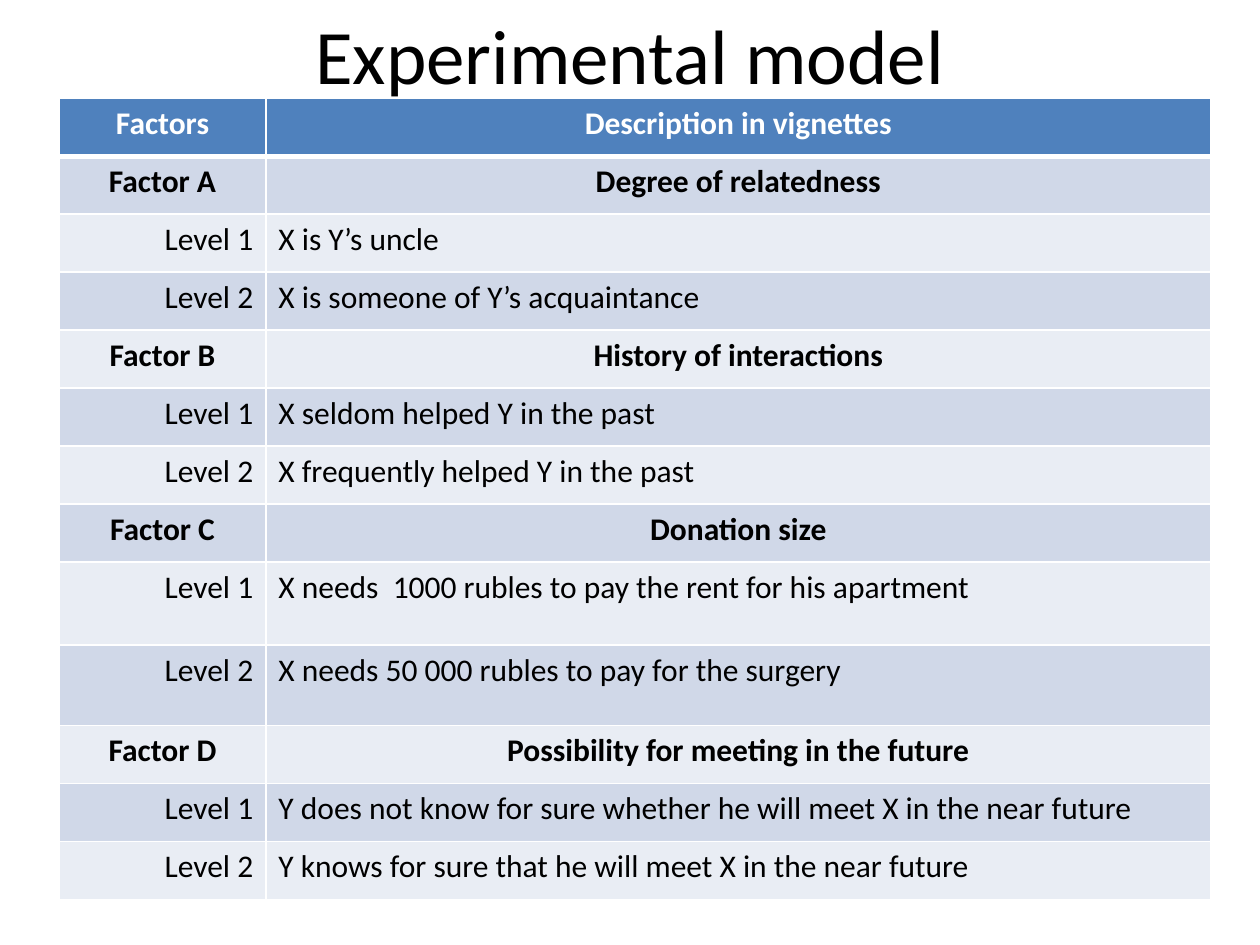
from dataclasses import dataclass

from pptx import Presentation
from pptx.dml.color import RGBColor
from pptx.enum.text import MSO_ANCHOR, MSO_AUTO_SIZE, PP_ALIGN
from pptx.oxml import parse_xml
from pptx.oxml.ns import nsdecls
from pptx.util import Inches, Pt


@dataclass(frozen=True)
class Theme:
    font: str = "Calibri"
    title_size: int = 44
    table_size: int = 18
    ink: str = "000000"
    white: str = "FFFFFF"
    header: str = "4F81BD"
    bands: tuple = ("D0D8E8", "E9EDF4")
    rule: float = 1
    header_rule: float = 3


HEADINGS = ("Factors", "Description in vignettes")
FACTORS = (
    ("Factor A", "Degree of relatedness",
     ("X is Y’s uncle", "X is someone of Y’s acquaintance")),
    ("Factor B", "History of interactions",
     ("X seldom helped Y in the past", "X frequently helped Y in the past")),
    ("Factor C", "Donation size",
     ("X needs  1000 rubles to pay the rent for his apartment",
      "X needs 50 000 rubles to pay for the surgery")),
    ("Factor D", "Possibility for meeting in the future",
     ("Y does not know for sure whether he will meet X in the near future",
      "Y knows for sure that he will meet X in the near future")),
)
COLUMN_WIDTHS = (1.64, 7.5)
ROW_HEIGHT = 0.46
TALL_ROWS = {8: 0.66, 9: 0.64}
CENTERED = (PP_ALIGN.CENTER, PP_ALIGN.CENTER)
LEVEL_ALIGNMENT = (PP_ALIGN.RIGHT, PP_ALIGN.LEFT)


def write(frame, text, *, font, size, color, bold=False, align=PP_ALIGN.LEFT):
    paragraph = frame.paragraphs[0]
    paragraph.alignment = align
    run = paragraph.add_run()
    run.text = text
    run.font.name = font
    run.font.size = Pt(size)
    run.font.bold = bold
    run.font.color.rgb = RGBColor.from_string(color)


def set_borders(cell, color, **widths):
    """Draw cell edges; widths in points are keyed L, R, T and B, in that order."""
    properties = cell._tc.get_or_add_tcPr()
    for position, (side, width) in enumerate(widths.items()):
        properties.insert(position, parse_xml(
            f'<a:ln{side} {nsdecls("a")} w="{Pt(width)}"><a:solidFill>'
            f'<a:srgbClr val="{color}"/></a:solidFill></a:ln{side}>'))


def table_rows():
    """Yield each row's texts, their alignments and whether they are bold."""
    yield HEADINGS, CENTERED, True
    for factor, description, levels in FACTORS:
        yield (factor, description), CENTERED, True
        for number, vignette in enumerate(levels, 1):
            yield (f"Level {number}", vignette), LEVEL_ALIGNMENT, False


class SlideBuilder:
    def __init__(self, slide, theme):
        self.slide = slide
        self.theme = theme

    def title(self, text, left, top, width, height):
        title = self.slide.shapes.title
        title.left, title.top = Inches(left), Inches(top)
        title.width, title.height = Inches(width), Inches(height)
        frame = title.text_frame
        frame.auto_size = MSO_AUTO_SIZE.NONE
        frame.vertical_anchor = MSO_ANCHOR.MIDDLE
        write(frame, text, font=self.theme.font, size=self.theme.title_size,
              color=self.theme.ink, align=PP_ALIGN.CENTER)

    def table(self, rows, left, top):
        heights = [TALL_ROWS.get(i, ROW_HEIGHT) for i in range(len(rows))]
        table = self.slide.shapes.add_table(
            len(rows), len(COLUMN_WIDTHS), Inches(left), Inches(top),
            Inches(sum(COLUMN_WIDTHS)), Inches(sum(heights))).table
        for column, width in zip(table.columns, COLUMN_WIDTHS):
            column.width = Inches(width)
        for index, (texts, alignments, bold) in enumerate(rows):
            table.rows[index].height = Inches(heights[index])
            for column, (text, align) in enumerate(zip(texts, alignments)):
                self.cell(table.cell(index, column), index, text, align, bold)

    def cell(self, cell, row, text, align, bold):
        theme = self.theme
        is_header = row == 0
        fill = theme.header if is_header else theme.bands[(row - 1) % 2]
        cell.fill.solid()
        cell.fill.fore_color.rgb = RGBColor.from_string(fill)
        set_borders(cell, theme.white, L=theme.rule, R=theme.rule,
                    T=theme.header_rule if row == 1 else theme.rule,
                    B=theme.header_rule if is_header else theme.rule)
        write(cell.text_frame, text, font=theme.font, size=theme.table_size,
              color=theme.white if is_header else theme.ink, bold=bold, align=align)


def main():
    presentation = Presentation()
    presentation.slide_width, presentation.slide_height = Inches(10), Inches(7.5)
    title_only = presentation.slide_layouts[5]
    builder = SlideBuilder(presentation.slides.add_slide(title_only), Theme())
    builder.title("Experimental model", 0.5, 0, 9, 0.86)
    builder.table(list(table_rows()), 0.47, 0.78)
    presentation.save("out.pptx")


if __name__ == "__main__":
    main()
